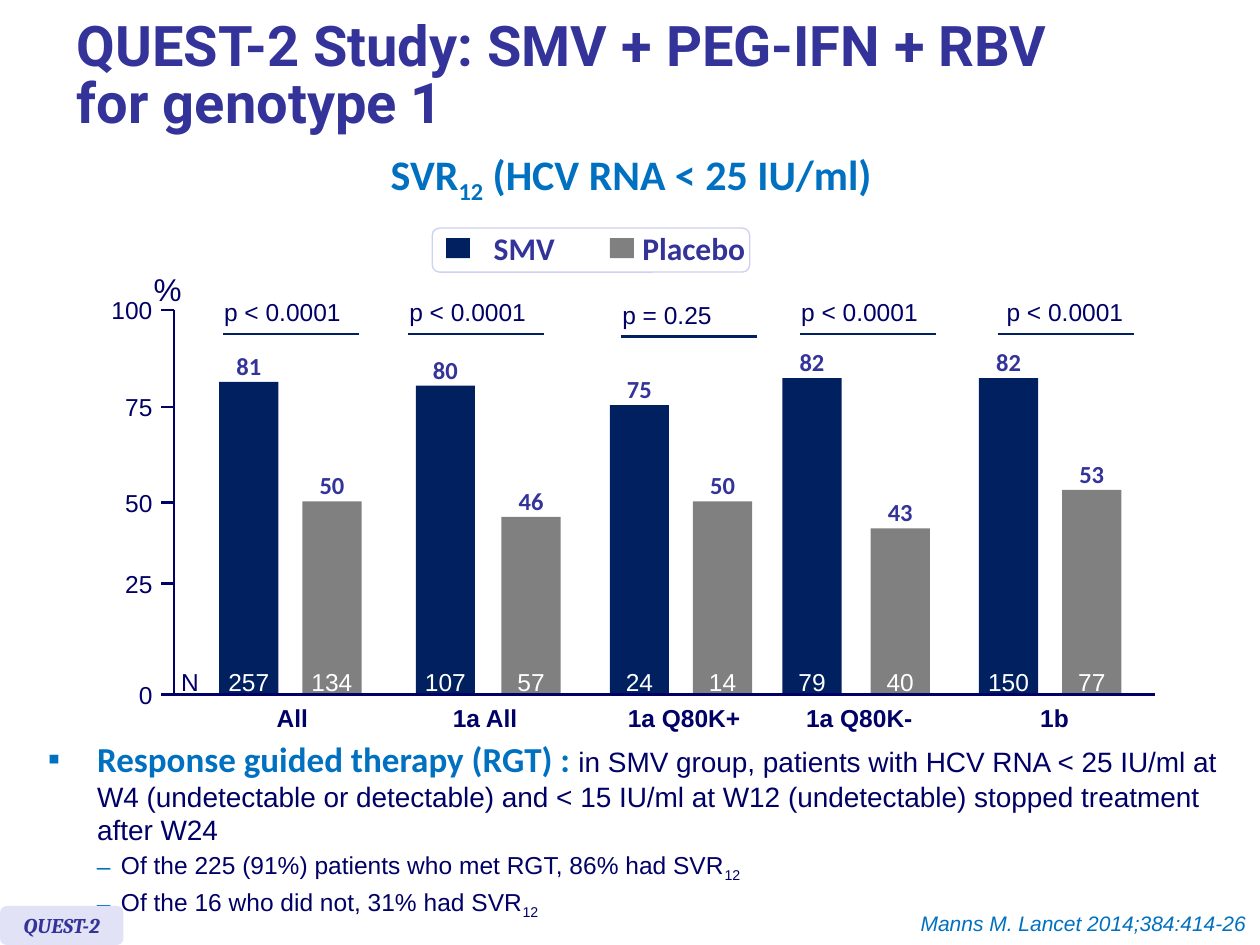
from lxml import etree
from pptx import Presentation
from pptx.dml.color import RGBColor
from pptx.enum import shapes, text
from pptx.oxml import ns
from pptx.util import Inches, Pt

COLORS = {
    "title": "333399", "accent": "0070C0", "ink": "000066", "smv": "002060",
    "placebo": "808080", "white": "FFFFFF", "tag": "E2E2F6", "border": "D0D0F0",
}
LEFT, CENTER, RIGHT = text.PP_ALIGN.LEFT, text.PP_ALIGN.CENTER, text.PP_ALIGN.RIGHT

BASE = 5.51
INCHES_PER_PERCENT = 0.0306
BAR_WIDTH = 0.47
AXIS_X = 1.38
TICKS = {100: 2.46, 75: 3.23, 50: 3.99, 25: 4.63, 0: 5.51}

# name, centre of name, (p value, label left, label width, rule left, rule y),
# then (bar left, SVR12 in percent, N) for SMV and for placebo
GENOTYPES = [
    ("All", 2.32, ("p < 0.0001", 1.68, 1.13, 1.77, 2.65), (1.74, 81, 257), (2.4, 50, 134)),
    ("1a All", 3.85, ("p < 0.0001", 3.15, 1.13, 3.24, 2.65), (3.3, 80, 107), (3.98, 46, 57)),
    ("1a Q80K+", 5.43, ("p = 0.25", 4.84, 0.92, 4.93, 2.67), (4.84, 75, 24), (5.5, 50, 14)),
    ("1a Q80K-", 6.82, ("p < 0.0001", 6.26, 1.13, 6.35, 2.65), (6.21, 82, 79), (6.91, 43, 40)),
    ("1b", 8.37, ("p < 0.0001", 7.89, 1.13, 7.92, 2.65), (7.77, 82, 150), (8.43, 53, 77)),
]


def rgb(name):
    return RGBColor.from_string(COLORS[name])


def style(run, size, color="ink", font="Arial", bold=False, italic=False):
    run.font.size = Pt(size)
    run.font.name = font
    run.font.bold = bold
    run.font.italic = italic
    run.font.color.rgb = rgb(color)


def add_run(paragraph, words, subscript=False, **look):
    run = paragraph.add_run()
    run.text = words
    style(run, **look)
    if subscript:
        run.font._element.set("baseline", "-25000")


def place(shape, left, top, width, height):
    shape.left, shape.top = Inches(left), Inches(top)
    shape.width, shape.height = Inches(width), Inches(height)


def add_label(slide, words, box, align=LEFT, inset=None, middle=False, **look):
    """Add a one-line text box that does not wrap."""
    frame = slide.shapes.add_textbox(*map(Inches, box)).text_frame
    frame.word_wrap = False
    if middle:
        frame.vertical_anchor = text.MSO_ANCHOR.MIDDLE
    if inset is not None:
        frame.margin_left = frame.margin_right = Inches(inset)
        frame.margin_top = frame.margin_bottom = Inches(inset)
    frame.text = words
    frame.paragraphs[0].alignment = align
    style(frame.paragraphs[0].runs[0], **look)


def add_block(slide, box, fill, border=None, kind=shapes.MSO_SHAPE.RECTANGLE):
    block = slide.shapes.add_shape(kind, *map(Inches, box))
    block.shadow.inherit = False
    block.fill.solid()
    block.fill.fore_color.rgb = rgb(fill)
    if border:
        block.line.color.rgb = rgb(border)
        block.line.width = Pt(0.75)
    else:
        block.line.fill.background()
    return block


def add_rule(slide, x1, y1, x2, y2, color="ink"):
    rule = slide.shapes.add_connector(
        shapes.MSO_CONNECTOR.STRAIGHT, *map(Inches, (x1, y1, x2, y2)))
    rule.line.color.rgb = rgb(color)
    rule.line.width = Pt(1.5)
    etree.SubElement(rule._element.spPr, ns.qn("a:effectLst"))


def set_bullet(paragraph, mark, margin, hanging):
    props = paragraph._p.get_or_add_pPr()
    props.set("marL", str(Inches(margin)))
    props.set("indent", str(-Inches(hanging)))
    color = etree.SubElement(props, ns.qn("a:buClr"))
    etree.SubElement(color, ns.qn("a:srgbClr"), val=COLORS["accent"])
    etree.SubElement(props, ns.qn("a:buFont"), typeface="Arial")
    etree.SubElement(props, ns.qn("a:buChar"), char=mark)


def fill_title(title):
    place(title, 0.51, 0.08, 9.13, 1.07)
    frame = title.text_frame
    frame.auto_size = text.MSO_AUTO_SIZE.NONE
    frame.vertical_anchor = text.MSO_ANCHOR.MIDDLE
    frame.text = "QUEST-2 Study: SMV + PEG-IFN + RBV\vfor genotype 1"
    heading = frame.paragraphs[0]
    heading.alignment = LEFT
    heading.line_spacing = 0.85
    for run in heading.runs:
        style(run, 32, "title", "Roboto", bold=True)


def fill_findings(body):
    place(body, 0.28, 5.8, 9.53, 1.45)
    frame = body.text_frame
    frame.auto_size = text.MSO_AUTO_SIZE.NONE
    therapy = frame.paragraphs[0]
    set_bullet(therapy, "▪", 0.39, 0.39)
    therapy.space_before = Pt(0)
    add_run(therapy, "Response guided therapy (RGT) : ",
            size=20, color="accent", font="Calibri", bold=True)
    add_run(therapy, "in SMV group, patients with HCV RNA < 25 IU/ml at W4 "
            "(undetectable or detectable) and < 15 IU/ml at W12 (undetectable) "
            "stopped treatment after W24", size=16)
    for finding in ("Of the 225 (91%) patients who met RGT, 86% had SVR",
                    "Of the 16 who did not, 31% had SVR"):
        outcome = frame.add_paragraph()
        outcome.level = 1
        set_bullet(outcome, "–", 0.58, 0.19)
        outcome.space_before = Pt(2)
        add_run(outcome, finding, size=14)
        add_run(outcome, "12", subscript=True, size=14)


def add_chart_heading(slide):
    frame = slide.shapes.add_textbox(*map(Inches, (2.88, 1.35, 4.26, 0.35))).text_frame
    frame.word_wrap = True
    frame.vertical_anchor = text.MSO_ANCHOR.MIDDLE
    heading = frame.paragraphs[0]
    heading.alignment = CENTER
    heading.line_spacing = Pt(15.2)
    for words, subscript in (("SVR", False), ("12", True), (" (HCV RNA < 25 IU/ml)", False)):
        add_run(heading, words, subscript, size=24, color="accent", font="Calibri", bold=True)


def add_legend(slide):
    add_block(slide, (3.43, 1.81, 2.52, 0.35), "white", "border",
              shapes.MSO_SHAPE.ROUNDED_RECTANGLE)
    for name, fill, key_left, name_left, width in (
            ("SMV", "smv", 3.54, 3.82, 0.69), ("Placebo", "placebo", 4.84, 5, 1.03)):
        add_block(slide, (key_left, 1.89, 0.19, 0.16), fill)
        add_label(slide, name, (name_left, 1.77, width, 0.4),
                  size=18, color="title", font="Calibri", bold=True)


def add_bar(slide, left, percent, patients, fill):
    height = percent * INCHES_PER_PERCENT
    top = BASE - height
    middle = left + BAR_WIDTH / 2
    add_block(slide, (left, top, BAR_WIDTH, height), fill)
    add_label(slide, str(percent), (middle - 0.2, top - 0.35, 0.4, 0.44), CENTER, 0.1, True,
              size=14, color="title", font="Calibri", bold=True)
    width = 0.2 + 0.11 * len(str(patients))
    add_label(slide, str(patients), (middle - width / 2, 5.28, width, 0.26), CENTER,
              middle=True, size=14, color="white")


def add_axes(slide):
    add_label(slide, "%", (1.12, 2.09, 0.42, 0.4), size=18)
    add_label(slide, "N", (1.34, 5.24, 0.34, 0.34), middle=True, size=14)
    for percent, y in TICKS.items():
        add_rule(slide, AXIS_X - 0.1, y, AXIS_X if percent else 9.17, y)
        width = 0.11 * len(str(percent))
        add_label(slide, str(percent), (1.21 - width, y - 0.12, width, 0.24), RIGHT, 0, True,
                  size=14)
    add_rule(slide, AXIS_X, TICKS[100], AXIS_X, TICKS[0])


def add_genotype(slide, name, center, p_value, smv, placebo):
    add_bar(slide, *smv, "smv")
    add_bar(slide, *placebo, "placebo")
    add_label(slide, name, (center - 0.55, 5.53, 1.1, 0.34), CENTER, size=14, bold=True)
    words, left, width, rule_left, rule_y = p_value
    add_label(slide, words, (left, rule_y - 0.34, width, 0.34), size=14)
    add_rule(slide, rule_left, rule_y, rule_left + 1.08, rule_y, "smv")


def add_footer(slide):
    add_label(slide, "Manns M. Lancet 2014;384:414-26", (7.14, 7.18, 2.85, 0.3), RIGHT,
              size=12, color="accent", italic=True)
    tag = add_block(slide, (0, 7.19, 0.98, 0.31), "tag",
                    kind=shapes.MSO_SHAPE.ROUNDED_RECTANGLE)
    frame = tag.text_frame
    frame.word_wrap = False
    frame.text = "QUEST-2"
    frame.paragraphs[0].alignment = CENTER
    style(frame.paragraphs[0].runs[0], 12, "title", "Cambria", bold=True, italic=True)


def main():
    deck = Presentation()
    deck.slide_width, deck.slide_height = Inches(10), Inches(7.5)
    slide = deck.slides.add_slide(deck.slide_layouts[1])
    fill_title(slide.shapes.title)
    fill_findings(slide.placeholders[1])
    add_chart_heading(slide)
    add_legend(slide)
    for genotype in GENOTYPES:
        add_genotype(slide, *genotype)
    add_axes(slide)
    add_footer(slide)
    deck.save("out.pptx")


if __name__ == "__main__":
    main()
